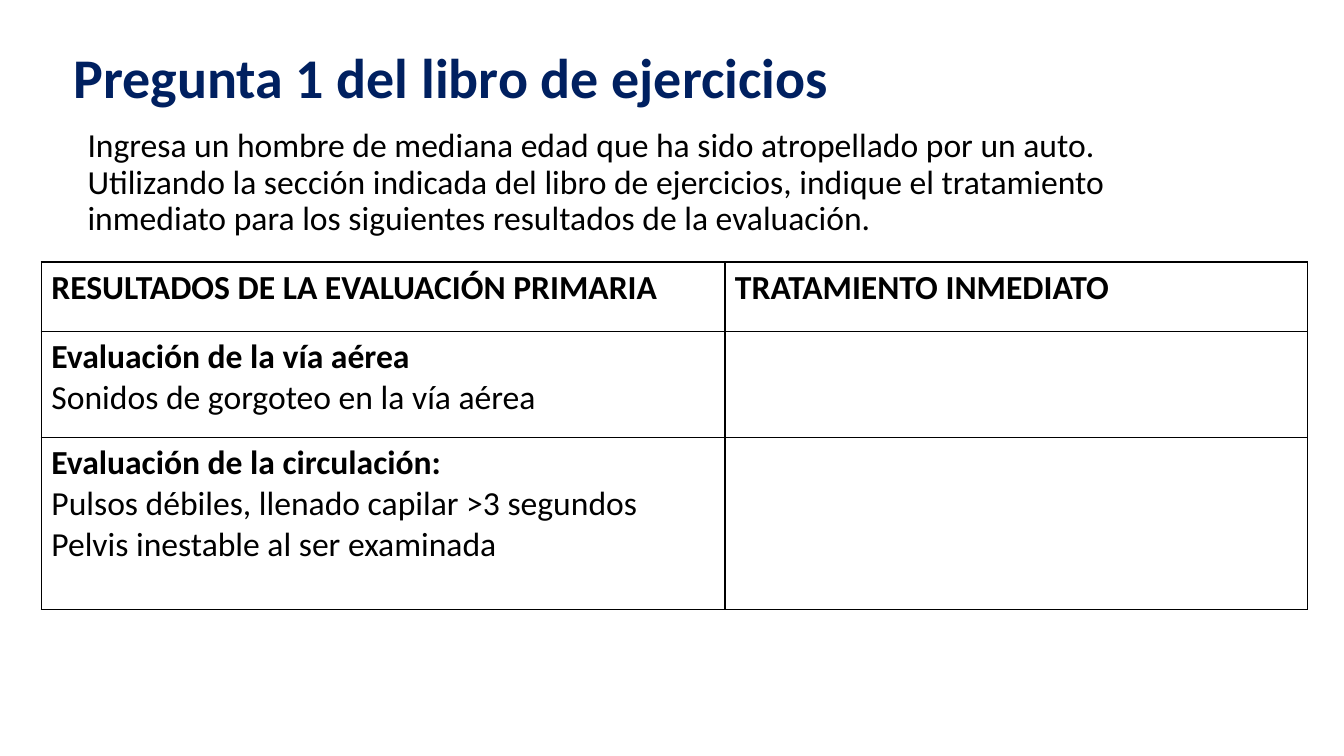
"""Build the workbook question slide with its assessment and treatment table."""
from lxml.etree import SubElement
from pptx import Presentation
from pptx.dml.color import RGBColor
from pptx.enum.text import MSO_ANCHOR
from pptx.oxml.ns import qn
from pptx.util import Inches, Pt

COLORS = {"title": "002060", "text": "000000", "border": "000000"}
FONT = "Calibri"


def add_text(paragraph, text, size, color, bold=False):
    run = paragraph.add_run()
    run.text = text
    run.font.name = FONT
    run.font.size = Pt(size)
    run.font.bold = bold
    run.font.color.rgb = RGBColor.from_string(COLORS[color])


def add_borders(cell):
    properties = cell._tc.get_or_add_tcPr()
    for side in ("a:lnL", "a:lnR", "a:lnT", "a:lnB"):
        line = SubElement(properties, qn(side), w=str(Pt(1)))
        fill = SubElement(line, qn("a:solidFill"))
        SubElement(fill, qn("a:srgbClr"), val=COLORS["border"])


presentation = Presentation()
presentation.slide_width = Inches(13.33)
presentation.slide_height = Inches(7.5)
slide = presentation.slides.add_slide(presentation.slide_layouts[6])

text_boxes = [
    (0.63, 0.07, 1.45, MSO_ANCHOR.MIDDLE, 40, "title", True,
     "Pregunta 1 del libro de ejercicios"),
    (0.77, 1.23, 1.4, MSO_ANCHOR.TOP, 24, "text", False,
     "Ingresa un hombre de mediana edad que ha sido atropellado por un auto. "
     "Utilizando la sección indicada del libro de ejercicios, indique el "
     "tratamiento inmediato para los siguientes resultados de la evaluación."),
]
for left, top, height, anchor, size, color, bold, text in text_boxes:
    box = slide.shapes.add_textbox(Inches(left), Inches(top), Inches(11.5), Inches(height))
    frame = box.text_frame
    frame.word_wrap = True
    frame.vertical_anchor = anchor
    paragraph = frame.paragraphs[0]
    paragraph.line_spacing = 0.9
    add_text(paragraph, text, size, color, bold)

column_widths = [6.78, 5.78]
row_heights = [0.69, 1.05, 1.71]
rows = [
    [["RESULTADOS DE LA EVALUACIÓN PRIMARIA"], ["TRATAMIENTO INMEDIATO"]],
    [["Evaluación de la vía aérea", "Sonidos de gorgoteo en la vía aérea"], []],
    [["Evaluación de la circulación:",
      "Pulsos débiles, llenado capilar >3 segundos",
      "Pelvis inestable al ser examinada"], []],
]
table = slide.shapes.add_table(
    len(rows), len(column_widths), Inches(0.41), Inches(2.6),
    Inches(sum(column_widths)), Inches(sum(row_heights))).table
table.first_row = False
table.horz_banding = False
for column, width in zip(table.columns, column_widths):
    column.width = Inches(width)
for row, height, contents in zip(table.rows, row_heights, rows):
    row.height = Inches(height)
    for cell, lines in zip(row.cells, contents):
        add_borders(cell)
        cell.fill.background()
        frame = cell.text_frame
        for index, line in enumerate(lines):
            paragraph = frame.add_paragraph() if index else frame.paragraphs[0]
            add_text(paragraph, line, 24, "text", bold=index == 0)

presentation.save("out.pptx")
